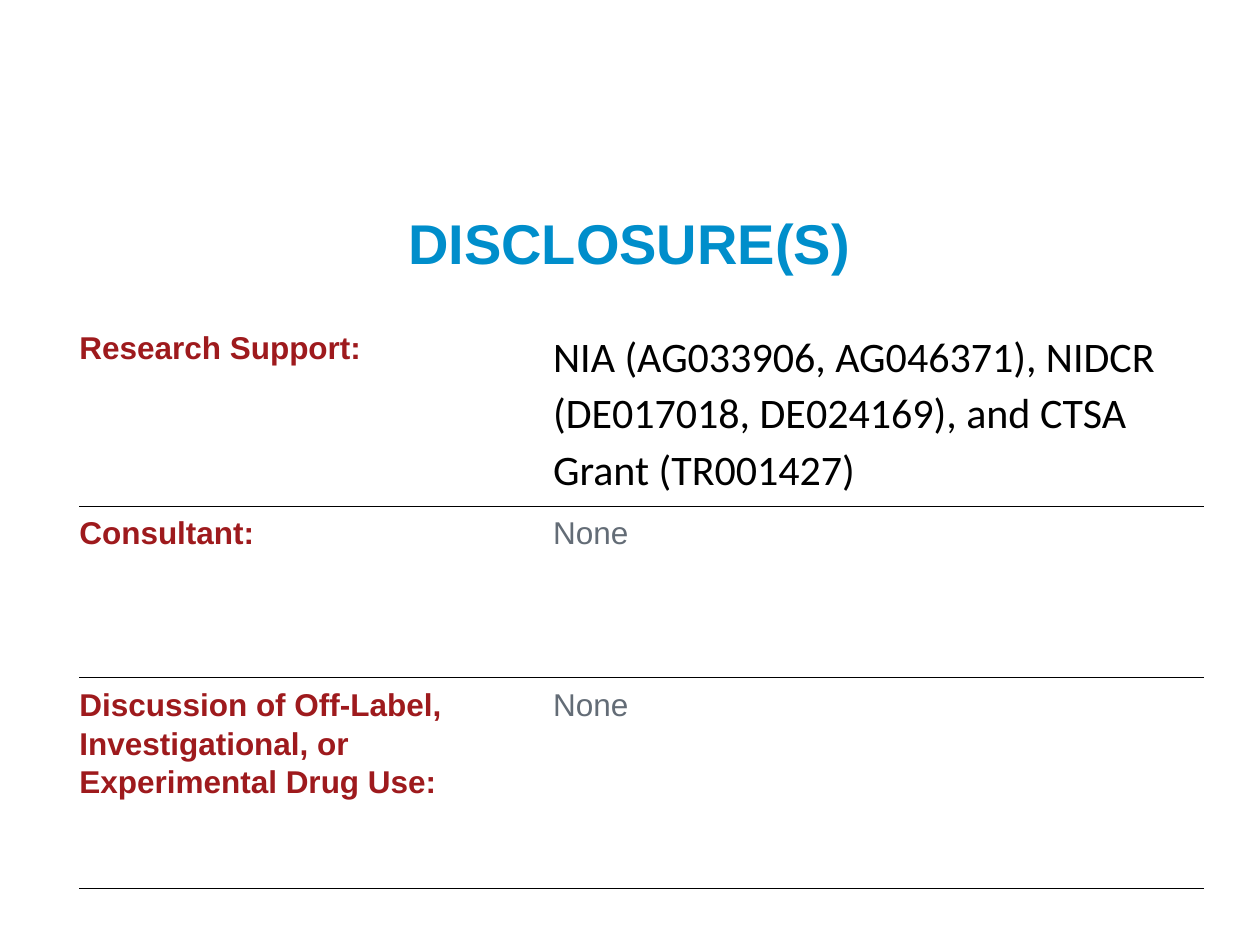
from dataclasses import dataclass

from lxml import etree
from pptx import Presentation
from pptx import util as u
from pptx.dml.color import RGBColor
from pptx.enum import text
from pptx.oxml.ns import qn


@dataclass(frozen=True)
class Theme:
    sans: str = "Arial"
    body: str = "Calibri"
    blue: str = "008ECB"
    red: str = "9E1A1D"
    gray: str = "636C76"
    black: str = "000000"
    head: int = 32
    large: int = 24
    small: int = 18
    rule: float = 0.5


THEME = Theme()
LABEL = (THEME.sans, THEME.small, THEME.red, True)
GRANT = (THEME.body, THEME.large, THEME.black, False)
REPLY = (THEME.sans, THEME.small, THEME.gray, False)

COLS = (3.66, 5.27)
ROWS = (
    (1.47, "Research Support:",
     "NIA (AG033906, AG046371), NIDCR (DE017018, DE024169), and CTSA Grant (TR001427)", GRANT),
    (1.36, "Consultant:", "None", REPLY),
    (1.67, "Discussion of Off-Label, Investigational, or Experimental Drug Use:", "None", REPLY),
)


def add_run(para, words, style):
    run = para.add_run()
    run.text = words
    font = run.font
    font.name, size, color, font.bold = style
    font.size = u.Pt(size)
    font.color.rgb = RGBColor.from_string(color)


def add_title(slide, words):
    box = slide.shapes.add_textbox(u.Inches(-0.07), u.Inches(1.61), u.Inches(10.13), u.Inches(0.64))
    frame = box.text_frame
    frame.word_wrap = True
    frame.auto_size = text.MSO_AUTO_SIZE.SHAPE_TO_FIT_TEXT
    para = frame.paragraphs[0]
    para.alignment = text.PP_ALIGN.CENTER
    add_run(para, words, (THEME.sans, THEME.head, THEME.blue, True))


def set_rules(cell, shown):
    """Draw the named cell borders and clear the others."""
    props = cell._tc.get_or_add_tcPr()
    for spot, side in enumerate(("lnL", "lnR", "lnT", "lnB")):
        line = etree.Element(qn(f"a:{side}"), w=str(u.Pt(THEME.rule)))
        if side in shown:
            fill = etree.SubElement(line, qn("a:solidFill"))
            etree.SubElement(fill, qn("a:srgbClr"), val=THEME.black)
        else:
            etree.SubElement(line, qn("a:noFill"))
        props.insert(spot, line)


def fill_cell(cell, words, style, left, shown):
    cell.fill.background()
    cell.margin_left = u.Inches(left)
    cell.margin_top = u.Inches(0.05)
    cell.margin_right = cell.margin_bottom = u.Inches(0.1)
    para = cell.text_frame.paragraphs[0]
    para.line_spacing = 1.1
    add_run(para, words, style)
    set_rules(cell, shown)


def add_grid(slide):
    high = sum(row[0] for row in ROWS)
    frame = slide.shapes.add_table(len(ROWS), len(COLS), u.Inches(0.63), u.Inches(2.55),
                                   u.Inches(sum(COLS)), u.Inches(high))
    table = frame.table
    table.first_row = table.horz_banding = False
    for col, wide in zip(table.columns, COLS):
        col.width = u.Inches(wide)
    for i, (tall, label, reply, style) in enumerate(ROWS):
        table.rows[i].height = u.Inches(tall)
        shown = ("lnT", "lnB") if i else ("lnB",)
        fill_cell(table.cell(i, 0), label, LABEL, 0, shown)
        fill_cell(table.cell(i, 1), reply, style, 0.1, shown)


def main():
    deck = Presentation()
    deck.slide_width, deck.slide_height = u.Inches(10), u.Inches(7.5)
    slide = deck.slides.add_slide(deck.slide_layouts[6])
    add_title(slide, "DISCLOSURE(S)")
    add_grid(slide)
    deck.save("out.pptx")


if __name__ == "__main__":
    main()
